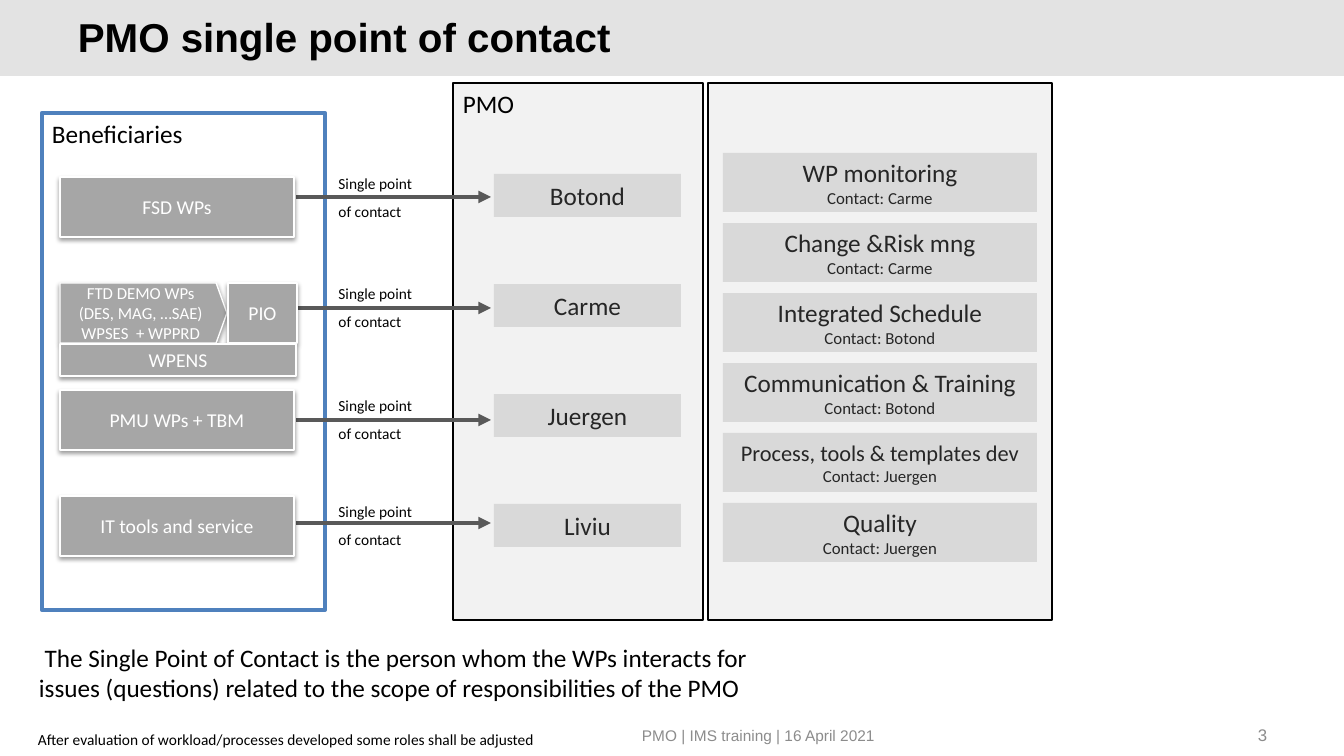
from lxml.etree import SubElement
from pptx import Presentation
from pptx.dml.color import RGBColor
from pptx.enum.shapes import MSO_CONNECTOR, MSO_SHAPE as SHAPE
from pptx.enum.text import MSO_ANCHOR as ANCHOR, MSO_AUTO_SIZE as FIT, PP_ALIGN as ALIGN
from pptx.oxml.ns import qn
from pptx.util import Pt

PX = 9071  # EMU per pixel, at 100.8 pixels to the inch
BLACK = RGBColor(0x00, 0x00, 0x00)
WHITE = RGBColor(0xFF, 0xFF, 0xFF)
BLUE = RGBColor(0x4F, 0x81, 0xBD)
BANNER = RGBColor(0xE3, 0xE3, 0xE3)
PANEL = RGBColor(0xF2, 0xF2, 0xF2)
CARD = RGBColor(0xD9, 0xD9, 0xD9)
PACKAGE = RGBColor(0xA6, 0xA6, 0xA6)
INK = RGBColor(0x26, 0x26, 0x26)
ARROW = RGBColor(0x59, 0x59, 0x59)
FOOTER = RGBColor(0x8C, 0x8C, 0x8C)

prs = Presentation()
prs.slide_width, prs.slide_height = 1344 * PX, 756 * PX
slide = prs.slides.add_slide(prs.slide_layouts[6])


def write(text, box, shape=None, sizes=(18,), font="Calibri", color=BLACK, bold=False,
          align=ALIGN.LEFT, anchor=ANCHOR.TOP, spacing=None, wrap=True, fit=FIT.NONE):
    """Write text in the shape, or in a new text box; sizes go by paragraph."""
    shape = shape or slide.shapes.add_textbox(*(v * PX for v in box))
    frame = shape.text_frame
    frame.text = text
    frame.word_wrap, frame.auto_size, frame.vertical_anchor = wrap, fit, anchor
    for i, paragraph in enumerate(frame.paragraphs):
        paragraph.alignment = align
        paragraph.line_spacing = spacing
        paragraph.font.name = font
        paragraph.font.size = Pt(sizes[min(i, len(sizes) - 1)])
        paragraph.font.bold = bold
        paragraph.font.color.rgb = color


def block(box, fill, line=None, width=1, kind=SHAPE.RECTANGLE, adj=None,
          shadow=False, text="", **text_format):
    """Draw a filled shape, with its text if it has any."""
    shape = slide.shapes.add_shape(kind, *(v * PX for v in box))
    shape.fill.solid()
    shape.fill.fore_color.rgb = fill
    if line is None:
        shape.line.fill.background()
    else:
        shape.line.color.rgb = line
        shape.line.width = Pt(width)
    if adj is not None:
        shape.adjustments[0] = adj
    shape.shadow.inherit = False
    if shadow:
        effects = shape._element.spPr.find(qn("a:effectLst"))
        outer = SubElement(effects, qn("a:outerShdw"), blurRad="40000", dist="20000",
                           dir="5400000", rotWithShape="0")
        tint = SubElement(outer, qn("a:srgbClr"), val="000000")
        SubElement(tint, qn("a:alpha"), val="38000")
    if text:
        write(text, box, shape, **text_format)


# Banner and title
block((0, 0, 1344, 76), BANNER)
write("PMO single point of contact", (68, 13, 1109, 50), sizes=(28.8,), font="Arial",
      bold=True, anchor=ANCHOR.MIDDLE, spacing=Pt(32))

# Panels
block((42, 113, 283, 497), WHITE, BLUE, 3, text="Beneficiaries")
block((708, 83, 344, 537), PANEL, BLACK, 2)
block((453, 83, 250, 537), PANEL, BLACK, 2, text="PMO")

# Contact persons, with the arrow and label that lead to each
contacts = [("Botond", 160, 197), ("Carme", 270, 308), ("Juergen", 382, 420), ("Liviu", 488, 523)]
for row, (person, label_y, arrow_y) in enumerate(contacts):
    block((494, 174 + 110 * row, 187, 43), CARD, text=person, color=INK,
          align=ALIGN.CENTER, anchor=ANCHOR.MIDDLE)
    write(" Single point\n of contact", (325, label_y, 98, 63), sizes=(11,),
          spacing=1.5, wrap=False, fit=FIT.SHAPE_TO_FIT_TEXT)
    arrow = slide.shapes.add_connector(MSO_CONNECTOR.STRAIGHT, 491 * PX, arrow_y * PX,
                                       296 * PX, arrow_y * PX)
    arrow.line.color.rgb = ARROW
    arrow.line.width = Pt(3)
    SubElement(arrow.line._get_or_add_ln(), qn("a:headEnd"), type="triangle")
    SubElement(arrow._element.spPr, qn("a:effectLst"))

# PMO services
services = [
    ("WP monitoring", "Carme", 18),
    ("Change &Risk mng", "Carme", 18),
    ("Integrated Schedule", "Botond", 18),
    ("Communication & Training", "Botond", 18),
    ("Process, tools & templates dev", "Juergen", 16),
    ("Quality", "Juergen", 18),
]
for row, (service, person, size) in enumerate(services):
    block((723, 153 + 70 * row, 314, 59), CARD, text=f"{service}\nContact: {person}",
          sizes=(size, 12), color=INK, align=ALIGN.CENTER, anchor=ANCHOR.MIDDLE)

# Work packages of the beneficiaries
packages = [
    ("IT tools and service", (60, 496, 234, 60), SHAPE.RECTANGLE, None, 14),
    ("PMU WPs + TBM", (60, 390, 234, 60), SHAPE.RECTANGLE, None, 14),
    ("FTD DEMO WPs (DES, MAG, …SAE) WPSES  + WPPRD", (60, 283, 167, 60),
     SHAPE.PENTAGON, 0.18, 12),
    ("FSD WPs", (60, 177, 234, 60), SHAPE.RECTANGLE, None, 14),
    ("PIO", (228, 283, 69, 60), SHAPE.CHEVRON, 0, 14),
    ("WPENS", (60, 344, 236, 32), SHAPE.RECTANGLE, None, 14),
]
for package, box, kind, adj, size in packages:
    block(box, PACKAGE, WHITE, kind=kind, adj=adj, shadow=True, text=package,
          sizes=(size,), color=WHITE, align=ALIGN.CENTER, anchor=ANCHOR.MIDDLE)

# Explanation and note
write(" The Single Point of Contact is the person whom the WPs interacts for issues "
      "(questions) related to the scope of responsibilities of the PMO",
      (29, 637, 771, 71), fit=FIT.SHAPE_TO_FIT_TEXT)
write("After evaluation of workload/processes developed some roles shall be adjusted",
      (28, 725, 521, 29), sizes=(11,), wrap=False, fit=FIT.SHAPE_TO_FIT_TEXT)

# Footer and slide number
for text, box, size in [("PMO | IMS training | 16 April 2021", (460, 715, 425, 40), 11),
                        ("3", (964, 715, 313, 40), 12)]:
    write(text, box, sizes=(size,), font="Arial", color=FOOTER,
          align=ALIGN.RIGHT, anchor=ANCHOR.MIDDLE)

prs.save("out.pptx")
